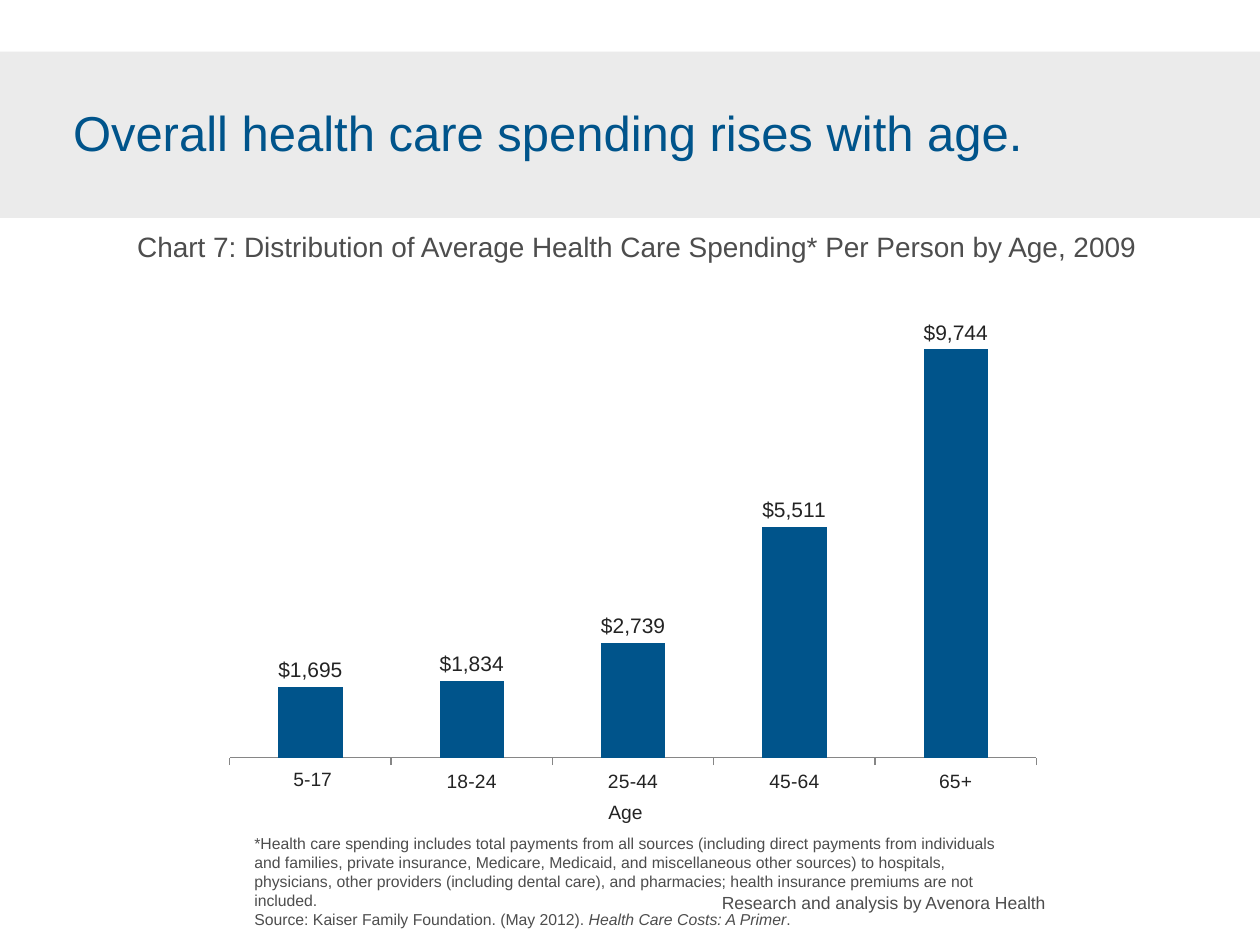
"""Build a slide charting average health care spending per person by age."""
from pptx import Presentation
from pptx.chart.data import CategoryChartData
from pptx.dml.color import RGBColor
from pptx.enum.chart import XL_CHART_TYPE as ChartType, XL_LABEL_POSITION as LabelPos
from pptx.enum.chart import XL_TICK_LABEL_POSITION as TickLabelPos, XL_TICK_MARK as Tick
from pptx.enum.shapes import MSO_SHAPE as Shape
from pptx.enum.text import MSO_ANCHOR as Anchor
from pptx.oxml import parse_xml
from pptx.oxml.ns import nsdecls
from pptx.util import Inches, Pt

TITLE = [["Overall health care spending rises with age."]]
SUBTITLE = [["Chart 7: Distribution of Average Health Care Spending* Per Person by Age, 2009"]]
CREDIT = [["Research and analysis by Avenora Health"]]
NOTES = [
    ["*Health care spending includes total payments from all sources (including direct "
     "payments from individuals and families, private insurance, Medicare, Medicaid, and "
     "miscellaneous other sources) to hospitals, physicians, other providers (including "
     "dental care), and pharmacies; health insurance premiums are not included."],
    ["Source: Kaiser Family Foundation. (May 2012). ", ("Health Care Costs: A Primer", True), "."],
]
AGES = ["", "18-24", "25-44", "45-64", "65+"]
SPENDING = [1695, 1834, 2739, 5511, 9744]
DOLLARS = '"$"#,##0'

THEME = {
    "font": "Arial", "band": "EBEBEB", "blue": "00548B", "grey": "4D4D4D",
    "dark": "232323", "axis": "868686",
    "title": 28, "subtitle": 16, "value": 12, "label": 11, "credit": 10, "notes": 9,
}
W, H = 10, 7.5
PLOT = {"x": 0.02, "y": 0.02, "w": 0.96, "h": 0.9}


def color(name):
    return RGBColor.from_string(THEME[name])


def style(font, size, ink):
    font.name, font.size = THEME["font"], Pt(THEME[size])
    font.color.rgb = color(ink)


def add_text(s, box, paragraphs, size, ink, inset=True, wrap=True, spacing=None):
    tf = s.shapes.add_textbox(*map(Inches, box)).text_frame
    tf.word_wrap = wrap
    if not inset:
        tf.margin_left = tf.margin_right = tf.margin_top = tf.margin_bottom = 0
    for i, runs in enumerate(paragraphs):
        p = tf.paragraphs[0] if i == 0 else tf.add_paragraph()
        if spacing:
            p.line_spacing = spacing
        for item in runs:
            text, italic = (item, False) if isinstance(item, str) else item
            r = p.add_run()
            r.text = text
            style(r.font, size, ink)
            r.font.italic = italic
    return tf


def add_spending_chart(s, box):
    data = CategoryChartData(number_format=DOLLARS)
    data.categories = AGES
    data.add_series("Series 1", SPENDING)
    chart = s.shapes.add_chart(ChartType.COLUMN_CLUSTERED, *map(Inches, box), data).chart
    chart.has_legend = chart.has_title = False
    style(chart.font, "subtitle", "grey")

    plot = chart.plots[0]
    plot.gap_width, plot.vary_by_categories = 150, False
    fill = plot.series[0].format.fill
    fill.solid()
    fill.fore_color.rgb = color("blue")
    plot.has_data_labels = True
    labels = plot.data_labels
    labels.show_value, labels.position = True, LabelPos.OUTSIDE_END
    labels.number_format, labels.number_format_is_linked = DOLLARS, False
    style(labels.font, "value", "dark")

    values = chart.value_axis
    values.minimum_scale, values.maximum_scale = 0, 12000
    values.has_major_gridlines = values.visible = False
    ages = chart.category_axis
    ages.major_tick_mark, ages.minor_tick_mark = Tick.OUTSIDE, Tick.NONE
    ages.tick_label_position = TickLabelPos.LOW
    style(ages.tick_labels.font, "label", "dark")
    ages.format.line.color.rgb = color("axis")
    ages.format.line.width = Pt(0.75)

    area = chart.element.chart.plotArea
    for old in area.findall(area.tag.replace("plotArea", "layout")):
        area.remove(old)
    modes = "".join(f'<c:{k}Mode val="edge"/>' for k in "xy")
    sizes = "".join(f'<c:{k} val="{v}"/>' for k, v in PLOT.items())
    area.insert(0, parse_xml(
        f'<c:layout {nsdecls("c")}><c:manualLayout><c:layoutTarget val="inner"/>'
        f'{modes}{sizes}</c:manualLayout></c:layout>'))


def main():
    prs = Presentation()
    prs.slide_width, prs.slide_height = Inches(W), Inches(H)
    s = prs.slides.add_slide(prs.slide_layouts[6])

    band = s.shapes.add_shape(Shape.RECTANGLE, 0, Inches(0.41), Inches(W), Inches(1.32))
    band.shadow.inherit = False
    band.fill.solid()
    band.fill.fore_color.rgb = color("band")
    band.line.fill.background()

    add_text(s, (5.73, 7.08, 2.64, 0.17), CREDIT, "credit", "grey", inset=False)
    title = add_text(s, (0.58, 0.9, 9, 0.38), TITLE, "title", "blue", inset=False, spacing=0.8)
    title.vertical_anchor = Anchor.BOTTOM
    add_text(s, (0.99, 1.77, 8.25, 0.37), SUBTITLE, "subtitle", "grey")
    add_text(s, (1.92, 6.57, 6.08, 0.86), NOTES, "notes", "grey")
    add_text(s, (4.73, 6.3, 0.48, 0.29), [["Age"]], "label", "dark", wrap=False)
    add_spending_chart(s, (1.69, 1.93, 6.67, 4.44))
    add_text(s, (2.23, 6.04, 0.51, 0.29), [["5-17"]], "label", "dark", wrap=False)
    prs.save("out.pptx")


if __name__ == "__main__":
    main()
